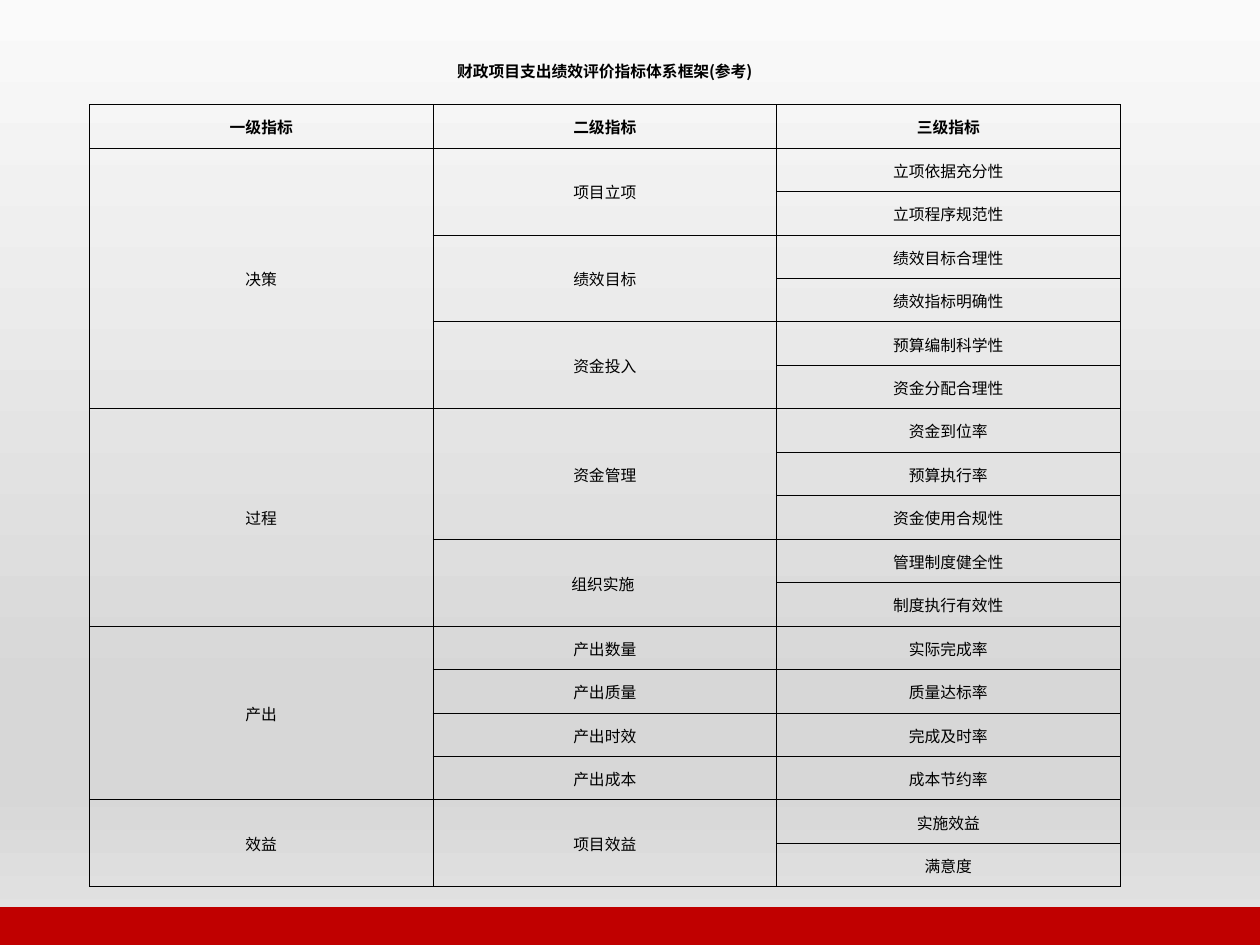
import lxml.etree
import pptx
import pptx.dml.color
import pptx.enum.shapes
import pptx.enum.text
import pptx.oxml.ns
import pptx.util
from dataclasses import dataclass

Inches = pptx.util.Inches
qn = pptx.oxml.ns.qn

TITLE = "财政项目支出绩效评价指标体系框架(参考)"
HEADERS = ["一级指标", "二级指标", "三级指标"]
INDICATORS = {
    "决策": {
        "项目立项": ["立项依据充分性", "立项程序规范性"],
        "绩效目标": ["绩效目标合理性", "绩效指标明确性"],
        "资金投入": ["预算编制科学性", "资金分配合理性"],
    },
    "过程": {
        "资金管理": ["资金到位率", "预算执行率", "资金使用合规性"],
        "组织实施 ": ["管理制度健全性", "制度执行有效性"],
    },
    "产出": {
        "产出数量": ["实际完成率"],
        "产出质量": ["质量达标率"],
        "产出时效": ["完成及时率"],
        "产出成本": ["成本节约率"],
    },
    "效益": {"项目效益": ["实施效益", "满意度"]},
}


@dataclass(frozen=True)
class Theme:
    font: str = "Noto Sans CJK SC"
    size: float = 9
    ink: str = "000000"
    footer: str = "C00000"
    border_width: float = 0.5
    background: tuple = ((0, "FAFAFA"), (74, "D7D7D7"), (83, "D7D7D7"), (100, "E4E4E4"))
    no_grid_style: str = "{2D5ABB26-0587-4C30-8999-92F81FD0307C}"


THEME = Theme()
LEFT, TOP, WIDTH, HEIGHT = 0.71, 0.28, 8.18, 6.76
TITLE_HEIGHT = 0.55


def rgb(value):
    return pptx.dml.color.RGBColor.from_string(value)


def add_child(parent, tag, **attributes):
    return lxml.etree.SubElement(parent, qn(tag), attributes)


def paint_background(slide):
    fill = slide.background.fill
    fill.gradient()
    fill.gradient_angle = 270
    stops = slide.element.find(".//" + qn("a:gsLst"))
    for stop in list(stops):
        stops.remove(stop)
    for percent, color in THEME.background:
        stop = add_child(stops, "a:gs", pos=str(percent * 1000))
        add_child(stop, "a:srgbClr", val=color)


def add_footer(slide):
    band = slide.shapes.add_shape(
        pptx.enum.shapes.MSO_SHAPE.RECTANGLE,
        Inches(-0.01), Inches(7.2), Inches(10.01), Inches(0.31))
    band.shadow.inherit = False
    band.fill.solid()
    band.fill.fore_color.rgb = rgb(THEME.footer)
    band.line.fill.background()


def write_text(cell, text, bold=False, size=THEME.size, color=THEME.ink):
    cell.vertical_anchor = pptx.enum.text.MSO_ANCHOR.MIDDLE
    paragraph = cell.text_frame.paragraphs[0]
    paragraph.alignment = pptx.enum.text.PP_ALIGN.CENTER
    run = paragraph.add_run()
    run.text = text
    run.font.size = pptx.util.Pt(size)
    run.font.bold = bold
    run.font.color.rgb = rgb(color)
    run.font.name = THEME.font
    add_child(run.font._element, "a:ea", typeface=THEME.font)


def style_cell(cell, sides):
    """Rule the named sides (letters of LRTB), and leave the cell unfilled."""
    cell.margin_left = cell.margin_right = cell.margin_top = Inches(0.01)
    cell.margin_bottom = 0
    properties = cell._tc.get_or_add_tcPr()
    for side in sides:
        line = add_child(properties, "a:ln" + side,
                         w=str(pptx.util.Pt(THEME.border_width)))
        add_child(add_child(line, "a:solidFill"), "a:srgbClr", val=THEME.ink)
    cell.fill.background()


def write_group(table, row, column, label, row_count):
    cell = table.cell(row, column)
    if row_count > 1:
        cell.merge(table.cell(row + row_count - 1, column))
    write_text(cell, label)


def add_indicator_table(slide):
    body_count = sum(len(names) for groups in INDICATORS.values()
                     for names in groups.values())
    table = slide.shapes.add_table(
        body_count + 2, len(HEADERS),
        Inches(LEFT), Inches(TOP), Inches(WIDTH), Inches(HEIGHT)).table
    table.first_row = table.horz_banding = False
    table._tbl.tblPr.find(qn("a:tableStyleId")).text = THEME.no_grid_style

    for column in table.columns:
        column.width = Inches(WIDTH / len(HEADERS))
    for index, row in enumerate(table.rows):
        row.height = Inches((HEIGHT - TITLE_HEIGHT) / (body_count + 1)
                            if index else TITLE_HEIGHT)
        for cell in row.cells:
            style_cell(cell, "LRTB" if index else "B")

    table.cell(0, 0).merge(table.cell(0, len(HEADERS) - 1))
    write_text(table.cell(0, 0), TITLE, bold=True)
    for column, header in enumerate(HEADERS):
        write_text(table.cell(1, column), header, bold=True)

    row = 2
    for first_level, groups in INDICATORS.items():
        write_group(table, row, 0, first_level, sum(map(len, groups.values())))
        for second_level, names in groups.items():
            write_group(table, row, 1, second_level, len(names))
            for name in names:
                write_text(table.cell(row, 2), name)
                row += 1


def main():
    deck = pptx.Presentation()
    deck.slide_width, deck.slide_height = Inches(10), Inches(7.5)
    slide = deck.slides.add_slide(deck.slide_layouts[6])
    paint_background(slide)
    add_footer(slide)
    add_indicator_table(slide)
    deck.save("out.pptx")


if __name__ == "__main__":
    main()
